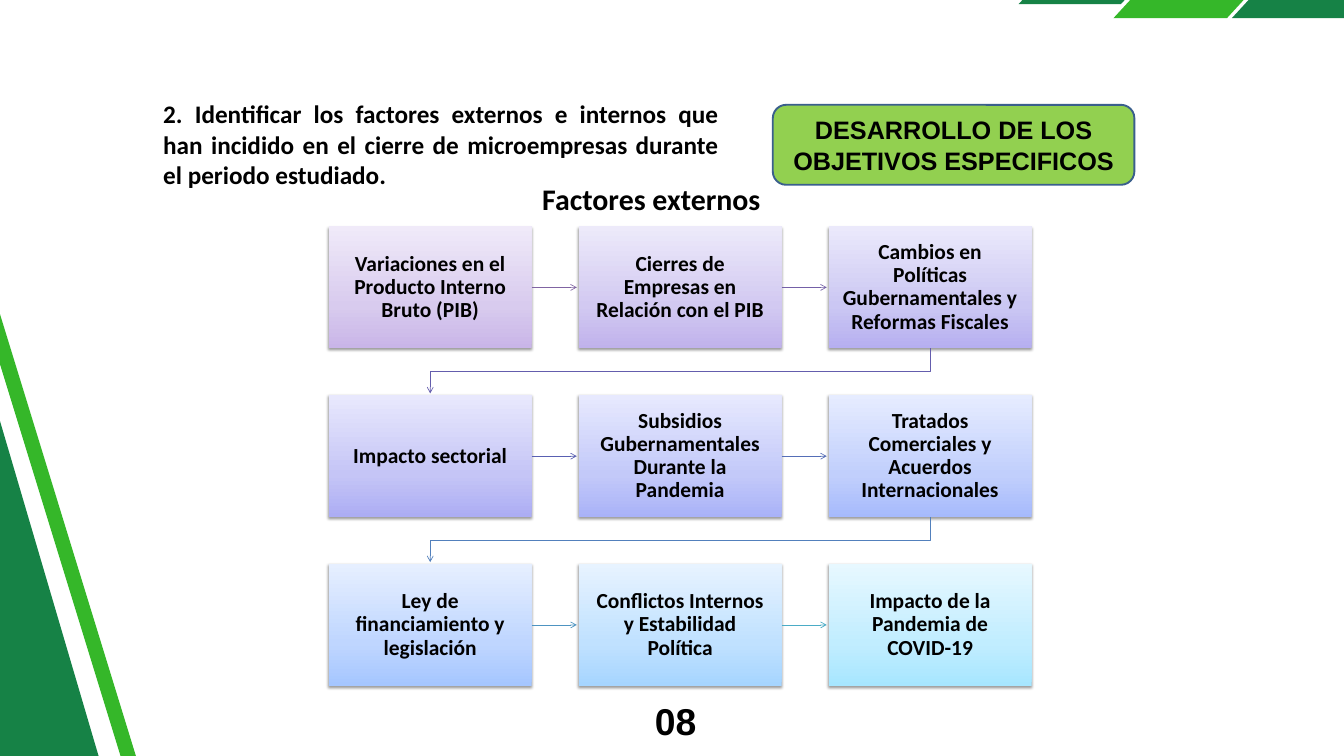
"""Build the slide on external factors behind the closing of microenterprises."""
from copy import deepcopy

from lxml import etree
from pptx import Presentation
from pptx.dml.color import RGBColor
from pptx.enum import shapes as kinds, text as txt
from pptx.oxml import ns
from pptx.util import Pt

HEX = {
    "ink": "000000", "dark": "168246", "green": "35B729",
    "lime": "92D050", "edge": "3A5F8C",
}
FILLS = {
    "Variaciones en el Producto Interno Bruto (PIB)": "C9B5E8 D8CBEE F0EAF9",
    "Cierres de Empresas en Relación con el PIB": "C0B2EC D2C9F1 EDEAFA",
    "Cambios en Políticas Gubernamentales y Reformas Fiscales": "B6AFF0 CBC7F3 EBE9FB",
    "Impacto sectorial": "ACADF4 C5C5F6 E8E8FD",
    "Subsidios Gubernamentales Durante la Pandemia": "A9B2F8 C3C9F9 E7E9FE",
    "Tratados Comerciales y Acuerdos Internacionales": "A6BAFC C1CFFC E6ECFF",
    "Ley de financiamiento y legislación": "A5C6FF BFD6FF E6EFFF",
    "Conflictos Internos y Estabilidad Política": "A6D5FF C0E1FF E7F3FF",
    "Impacto de la Pandemia de COVID-19": "A7E6FF C1EDFF E7F8FF",
}
LINES = "8064A2 7460A7 645DAD 5960B2 556EB7 5280BC 4E94C1 4BACC6".split()
COLS = 3
LEFT, TOP = 352.2, 242.7
WIDE, HIGH = 217.5, 130.5
STEP_X, STEP_Y = 267.8, 180.8
KIND = kinds.MSO_SHAPE
ALIGN = txt.PP_ALIGN


def rgb(code):
    return RGBColor.from_string(code)


def style(shape, words, size, font="Calibri", align=ALIGN.CENTER,
          anchor=txt.MSO_ANCHOR.TOP, inset=None, lead=None):
    frame = shape.text_frame
    frame.text = words
    frame.word_wrap = True
    frame.auto_size = txt.MSO_AUTO_SIZE.NONE
    frame.vertical_anchor = anchor
    if inset is not None:
        frame.margin_left = frame.margin_right = Pt(inset)
        frame.margin_top = frame.margin_bottom = Pt(inset)
    para = frame.paragraphs[0]
    para.alignment = align
    if lead:
        para.line_spacing = lead
    face = para.runs[0].font
    face.name, face.size, face.bold = font, Pt(size), True
    face.color.rgb = rgb(HEX["ink"])


def add_solid(slide, kind, place, fill, turn=0):
    shape = slide.shapes.add_shape(kind, *map(Pt, place))
    shape.shadow.inherit = False
    shape.fill.solid()
    shape.fill.fore_color.rgb = rgb(fill)
    shape.line.fill.background()
    shape.rotation = turn
    return shape


def add_label(slide, place, words, size, **look):
    style(slide.shapes.add_textbox(*map(Pt, place)), words, size, **look)


def add_decor(slide):
    for place, fill in (
        ((1091.5, -62, 170.6, 66.3), "dark"),
        ((1193, -76.3, 209.7, 95.8), "green"),
        ((1319.8, -76.3, 209.7, 95.8), "dark"),
    ):
        bar = add_solid(slide, KIND.PARALLELOGRAM, place, HEX[fill])
        bar.adjustments[0] = 0.92
    add_solid(slide, KIND.RECTANGLE, (-726.5, 448.6, 1181.5, 361), HEX["dark"], 253.6)
    add_solid(slide, KIND.RECTANGLE, (-509.8, 618.5, 1181.5, 15.8), HEX["green"], 252.9)


def add_shade(shape):
    effects = shape._element.spPr.find(ns.qn("a:effectLst"))
    shade = etree.SubElement(
        effects, ns.qn("a:outerShdw"), blurRad=str(Pt(3.1)), dist=str(Pt(1.6)),
        dir="5400000", rotWithShape="0")
    tone = etree.SubElement(shade, ns.qn("a:srgbClr"), val=HEX["ink"])
    etree.SubElement(tone, ns.qn("a:alpha"), val="38000")


def add_box(slide, x, y, words, tones):
    box = add_solid(slide, KIND.RECTANGLE, (x, y, WIDE, HIGH), tones[0])
    box.fill.gradient()
    box.fill.gradient_angle = 90
    stops = box._element.spPr.find(".//" + ns.qn("a:gsLst"))
    stops.append(deepcopy(stops[0]))
    for stop, spot, tone in zip(box.fill.gradient_stops, (0, 0.35, 1), tones):
        stop.position = spot
        stop.color.rgb = rgb(tone)
    add_shade(box)
    style(box, words, 23, anchor=txt.MSO_ANCHOR.MIDDLE, inset=13, lead=0.9)


def add_arrow(slide, points, tone):
    ends = [(Pt(x), Pt(y)) for x, y in points]
    if len(ends) == 2:
        arrow = slide.shapes.add_connector(
            kinds.MSO_CONNECTOR.STRAIGHT, *ends[0], *ends[1])
    else:
        path = slide.shapes.build_freeform(*ends[0])
        path.add_line_segments(ends[1:], close=False)
        arrow = path.convert_to_shape()
        arrow.fill.background()
    arrow.line.width = Pt(0.75)
    arrow.line.color.rgb = rgb(tone)
    etree.SubElement(arrow.line._get_or_add_ln(), ns.qn("a:tailEnd"), type="arrow")
    etree.SubElement(arrow._element.spPr, ns.qn("a:effectLst"))


def add_flow(slide):
    for i, (words, tones) in enumerate(FILLS.items()):
        row, col = divmod(i, COLS)
        x, y = LEFT + col * STEP_X, TOP + row * STEP_Y
        add_box(slide, x, y, words, tones.split())
        if i == len(LINES):
            continue
        if col < COLS - 1:
            mid = y + HIGH / 2
            points = [(x + WIDE, mid), (x + STEP_X - 2, mid)]
        else:
            start, goal, base = x + WIDE / 2, LEFT + WIDE / 2, y + HIGH
            turn = base + (STEP_Y - HIGH) / 2
            points = [(start, base), (start, turn), (goal, turn),
                      (goal, y + STEP_Y - 2)]
        add_arrow(slide, points, LINES[i])


def add_title(slide, place, words):
    title = slide.shapes.title
    title.left, title.top, title.width, title.height = map(Pt, place)
    style(title, words, 32)


def add_badge(slide, place, words):
    badge = add_solid(slide, KIND.ROUNDED_RECTANGLE, place, HEX["lime"])
    badge.line.color.rgb = rgb(HEX["edge"])
    badge.line.width = Pt(2)
    style(badge, words, 27, font="Arial", anchor=txt.MSO_ANCHOR.MIDDLE)


def main():
    deck = Presentation()
    deck.slide_width, deck.slide_height = Pt(1440), Pt(810)
    slide = deck.slides.add_slide(deck.slide_layouts[5])
    add_decor(slide)
    add_badge(slide, (828, 112.3, 387.4, 85.7), "DESARROLLO DE LOS OBJETIVOS ESPECIFICOS")
    add_label(
        slide, (167.8, 102.2, 609, 105),
        "2. Identificar los factores externos e internos que han incidido en el "
        "cierre de microempresas durante el periodo estudiado.",
        27, align=ALIGN.JUSTIFY)
    add_flow(slide)
    add_title(slide, (401, 190, 594, 46), "Factores externos")
    add_label(slide, (651, 756.7, 95, 39.6), "08", 40, font="Arial",
              align=ALIGN.RIGHT, inset=0, lead=Pt(39.2))
    deck.save("out.pptx")


if __name__ == "__main__":
    main()
